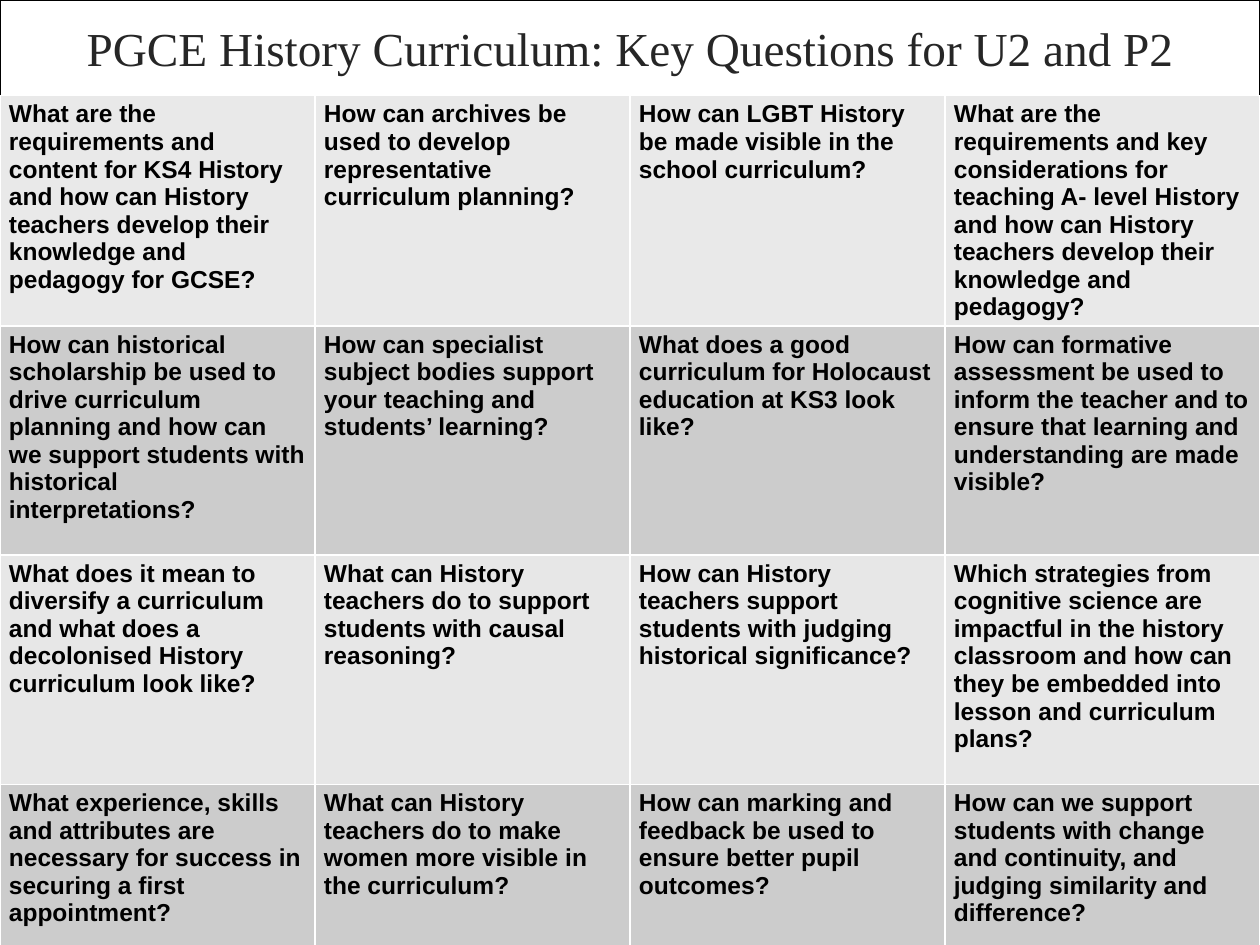
from dataclasses import dataclass

from lxml import etree
from pptx import Presentation
from pptx import util as u
from pptx.dml.color import RGBColor
from pptx.enum import shapes, text
from pptx.oxml.ns import qn

SLIDE_W, SLIDE_H = 25.4, 19.05
TITLE_H = 1.93
ROW_HEIGHTS = (4.32, 4.62, 4.62, 3.56)

TITLE = "PGCE History Curriculum: Key Questions for U2 and P2"
QUESTIONS = (
    (
        "What are the requirements and content for KS4 History and how can History teachers develop their knowledge and pedagogy for GCSE?",
        "How can archives be used to develop representative curriculum planning?",
        "How can LGBT History be made visible in the school curriculum?",
        "What are the requirements and key considerations for teaching A- level History and how can History teachers develop their knowledge and pedagogy?",
    ),
    (
        "How can historical scholarship be used to drive curriculum planning and how can we support students with historical interpretations?",
        "How can specialist subject bodies support your teaching and students’ learning?",
        "What does a good curriculum for Holocaust education at KS3 look like?",
        "How can formative assessment be used to inform the teacher and to ensure that learning and understanding are made visible?",
    ),
    (
        "What does it mean to diversify a curriculum and what does a decolonised History curriculum look like?",
        "What can History teachers do to support students with causal reasoning?",
        "How can History teachers support students with judging historical significance?",
        "Which strategies from cognitive science are impactful in the history classroom and how can they be embedded into lesson and curriculum plans?",
    ),
    (
        "What experience, skills and attributes are necessary for success in securing a first appointment?",
        "What can History teachers do to make women more visible in the curriculum?",
        "How can marking and feedback be used to ensure better pupil outcomes?",
        "How can we support students with change and continuity, and judging similarity and difference?",
    ),
)


@dataclass(frozen=True)
class Theme:
    white: str = "FFFFFF"
    black: str = "000000"
    title_color: str = "262626"
    row_fills: tuple = ("E9E9E9", "CCCCCC", "E7E7E7", "CCCCCC")
    title_font: str = "Times New Roman"
    body_font: str = "Arial"
    title_size: int = 27
    body_size: int = 14
    outline: float = 0.75
    border: int = 1


class SlideBuilder:
    def __init__(self, slide, theme):
        self.slide = slide
        self.theme = theme

    def set_text(self, tf, content, font, size, color, bold=False):
        tf.text = content
        tf.word_wrap = True
        r = tf.paragraphs[0].runs[0]
        r.font.name = font
        r.font.size = u.Pt(size)
        r.font.bold = bold
        r.font.color.rgb = RGBColor.from_string(color)

    def title(self, content):
        th = self.theme
        sp = self.slide.shapes.add_shape(
            shapes.MSO_SHAPE.RECTANGLE, 0, 0, u.Cm(SLIDE_W), u.Cm(TITLE_H))
        sp.shadow.inherit = False
        sp.fill.solid()
        sp.fill.fore_color.rgb = RGBColor.from_string(th.white)
        sp.line.color.rgb = RGBColor.from_string(th.black)
        sp.line.width = u.Pt(th.outline)
        tf = sp.text_frame
        self.set_text(tf, content, th.title_font, th.title_size, th.title_color)
        tf.vertical_anchor = text.MSO_ANCHOR.MIDDLE
        tf.paragraphs[0].alignment = text.PP_ALIGN.CENTER

    def borders(self, cell):
        tc_pr = cell._tc.get_or_add_tcPr()
        for side in ("lnL", "lnR", "lnT", "lnB"):
            ln = etree.SubElement(tc_pr, qn(f"a:{side}"), w=str(u.Pt(self.theme.border)))
            fill = etree.SubElement(ln, qn("a:solidFill"))
            etree.SubElement(fill, qn("a:srgbClr"), val=self.theme.white)

    def cell(self, cell, content, fill):
        th = self.theme
        self.borders(cell)
        cell.fill.solid()
        cell.fill.fore_color.rgb = RGBColor.from_string(fill)
        cell.margin_left = cell.margin_right = u.Cm(0.18)
        cell.margin_top = cell.margin_bottom = u.Cm(0.1)
        self.set_text(cell.text_frame, content, th.body_font, th.body_size, th.black, bold=True)

    def question_table(self, rows, heights):
        table = self.slide.shapes.add_table(
            len(rows), len(rows[0]), 0, u.Cm(TITLE_H),
            u.Cm(SLIDE_W), u.Cm(sum(heights))).table
        table.first_row = table.horz_banding = False
        for column in table.columns:
            column.width = u.Cm(SLIDE_W / len(rows[0]))
        for i, (questions, height) in enumerate(zip(rows, heights)):
            table.rows[i].height = u.Cm(height)
            for j, question in enumerate(questions):
                self.cell(table.cell(i, j), question, self.theme.row_fills[i])


def main():
    prs = Presentation()
    prs.slide_width, prs.slide_height = u.Cm(SLIDE_W), u.Cm(SLIDE_H)
    s = prs.slides.add_slide(prs.slide_layouts[6])
    builder = SlideBuilder(s, Theme())
    builder.title(TITLE)
    builder.question_table(QUESTIONS, ROW_HEIGHTS)
    prs.save("out.pptx")


if __name__ == "__main__":
    main()
